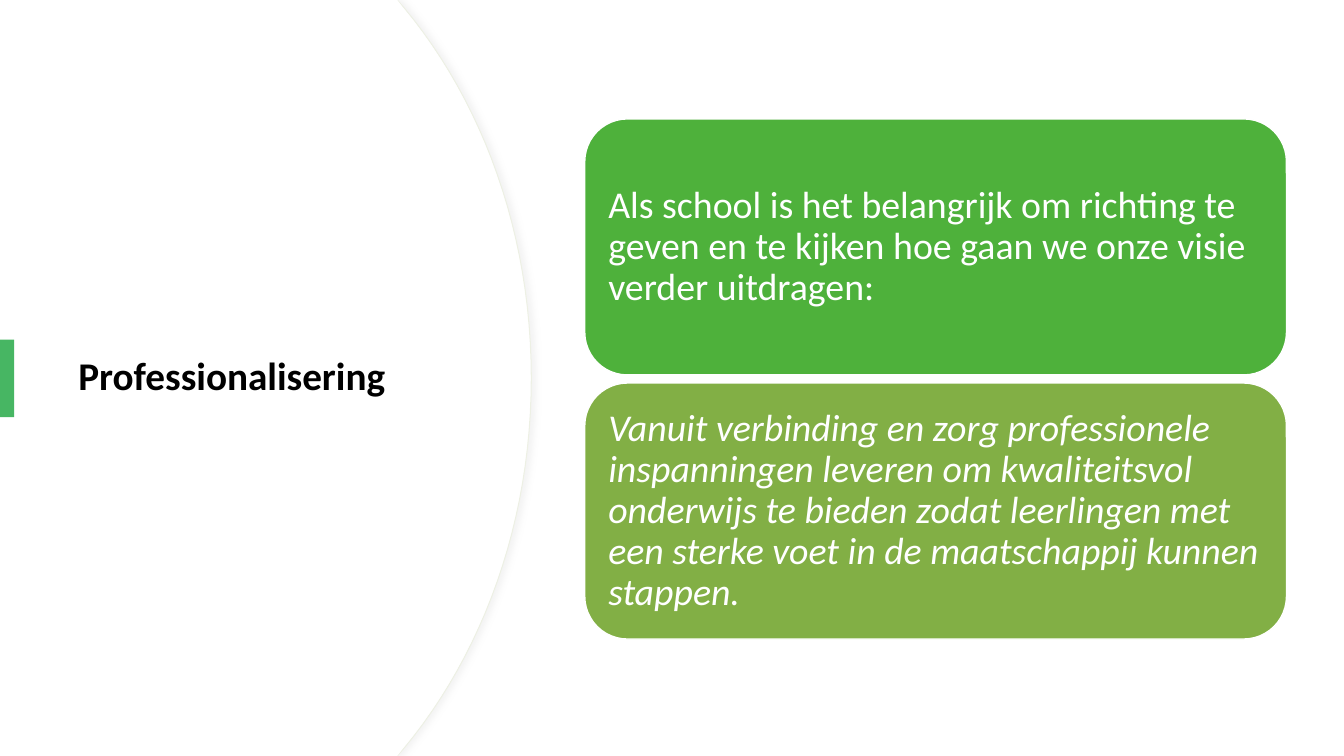
from dataclasses import dataclass

from lxml import etree
from pptx import Presentation
from pptx.dml.color import RGBColor
from pptx.enum.shapes import MSO_SHAPE as Shape
from pptx.enum.text import MSO_ANCHOR as Anchor, PP_ALIGN as Align
from pptx.oxml.ns import qn
from pptx.util import Inches, Pt


@dataclass(frozen=True)
class Theme:
    font: str = "Calibri"
    title_size: float = 28
    card_size: float = 27
    white: str = "FFFFFF"
    black: str = "000000"
    edge: str = "EDF0E4"
    shadow: str = "D9D9D9"
    accent: str = "47B663"
    green: str = "4EB13B"
    olive: str = "82AF45"


SLIDE_WIDTH, SLIDE_HEIGHT = 13.33, 7.5
CARD_LEFT, CARD_TOP, CARD_WIDTH, CARD_HEIGHT, CARD_STEP = 5.8, 1.18, 6.96, 2.54, 2.62
CURVE_STEPS = 24


def bezier(start, control_1, control_2, end):
    """Return points along a cubic curve, without its start point."""
    points = []
    for step in range(1, CURVE_STEPS + 1):
        t = step / CURVE_STEPS
        weights = ((1 - t) ** 3, 3 * t * (1 - t) ** 2, 3 * t * t * (1 - t), t ** 3)
        corners = (start, control_1, control_2, end)
        points.append(tuple(sum(w * corner[axis] for w, corner in zip(weights, corners))
                            for axis in (0, 1)))
    return points


class SlideBuilder:
    def __init__(self, slide, theme):
        self.shapes = slide.shapes
        self.theme = theme

    def paint(self, shape, fill, line=None, line_width=0.75):
        shape.shadow.inherit = False
        shape.fill.solid()
        shape.fill.fore_color.rgb = RGBColor.from_string(fill)
        if line:
            shape.line.color.rgb = RGBColor.from_string(line)
            shape.line.width = Pt(line_width)
        else:
            shape.line.fill.background()

    def set_text(self, frame, text, size, color, bold=False, italic=False):
        frame.word_wrap = True
        frame.vertical_anchor = Anchor.MIDDLE
        para = frame.paragraphs[0]
        para.text = text
        para.alignment = Align.LEFT
        para.line_spacing = 0.9
        font = para.font
        font.name, font.size = self.theme.font, Pt(size)
        font.bold, font.italic = bold, italic
        font.color.rgb = RGBColor.from_string(color)

    def panel(self, right, line=None):
        """Draw the left panel, whose curved side reaches furthest at right."""
        middle = SLIDE_HEIGHT / 2
        shoulder = (right - 1.26, 0.08)
        upper = [shoulder] + bezier(shoulder, (right - 0.48, 1.02),
                                    (right, 2.32), (right, middle))
        lower = [(x, SLIDE_HEIGHT - y) for x, y in reversed(upper[:-1])]
        outline = [(3.94, 0), *upper, *lower, (3.94, SLIDE_HEIGHT), (0, SLIDE_HEIGHT)]
        builder = self.shapes.build_freeform(0, 0)
        builder.add_line_segments([(Inches(x), Inches(y)) for x, y in outline], close=True)
        panel = builder.convert_to_shape()
        self.paint(panel, self.theme.white, line)
        return panel

    def add_shadow(self, shape):
        effects = shape._element.spPr.find(qn("a:effectLst"))
        shadow = etree.SubElement(effects, qn("a:outerShdw"), blurRad=str(Pt(4)),
                                  dist=str(Pt(3)), dir="0", rotWithShape="0")
        color = etree.SubElement(shadow, qn("a:srgbClr"), val=self.theme.shadow)
        etree.SubElement(color, qn("a:alpha"), val="30000")

    def title(self, text):
        box = self.shapes.add_textbox(Inches(0.68), Inches(1.27), Inches(3.94), Inches(4.95))
        self.set_text(box.text_frame, text, self.theme.title_size, self.theme.black, bold=True)

    def accent_bar(self):
        bar = self.shapes.add_shape(Shape.RECTANGLE, 0, Inches(3.37), Inches(0.14), Inches(0.77))
        self.paint(bar, self.theme.accent)

    def card(self, top, text, fill, italic):
        card = self.shapes.add_shape(Shape.ROUNDED_RECTANGLE, Inches(CARD_LEFT), Inches(top),
                                     Inches(CARD_WIDTH), Inches(CARD_HEIGHT))
        self.paint(card, fill, self.theme.white, 1)
        frame = card.text_frame
        frame.margin_left = frame.margin_right = Inches(0.11)
        frame.margin_top = frame.margin_bottom = Inches(0.11)
        self.set_text(frame, text, self.theme.card_size, self.theme.white, italic=italic)


def main():
    deck = Presentation()
    deck.slide_width, deck.slide_height = Inches(SLIDE_WIDTH), Inches(SLIDE_HEIGHT)
    theme = Theme()
    page = SlideBuilder(deck.slides.add_slide(deck.slide_layouts[6]), theme)

    page.add_shadow(page.panel(5.27, theme.edge))
    page.panel(5.26)
    page.title("Professionalisering")
    page.accent_bar()
    cards = [
        ("Als school is het belangrijk om richting te geven en te kijken hoe gaan we "
         "onze visie verder uitdragen:", theme.green, False),
        ("Vanuit verbinding en zorg professionele inspanningen leveren om kwaliteitsvol "
         "onderwijs te bieden zodat leerlingen met een sterke voet in de maatschappij "
         "kunnen stappen.", theme.olive, True),
    ]
    for index, (text, fill, italic) in enumerate(cards):
        page.card(CARD_TOP + index * CARD_STEP, text, fill, italic)
    deck.save("out.pptx")


if __name__ == "__main__":
    main()
